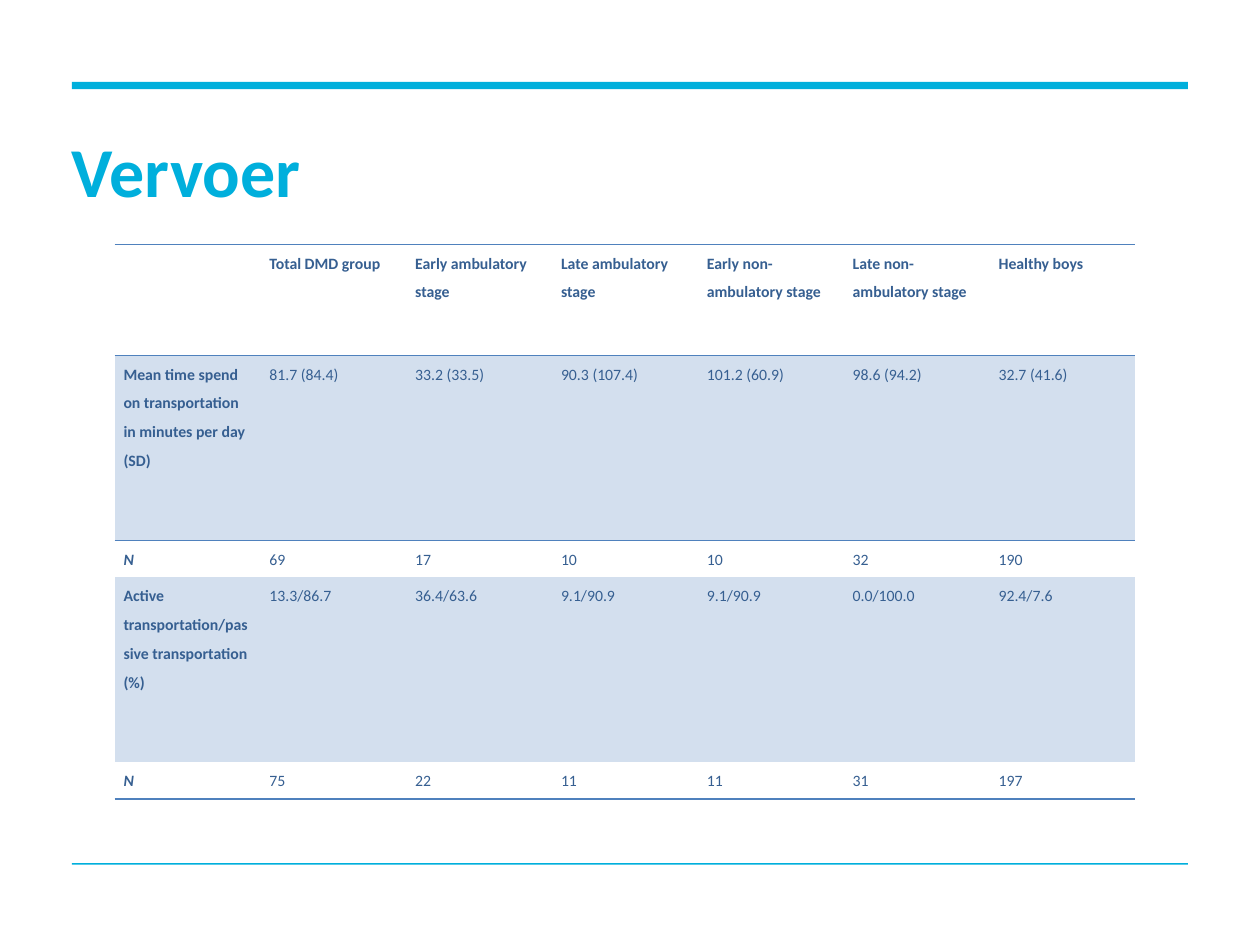
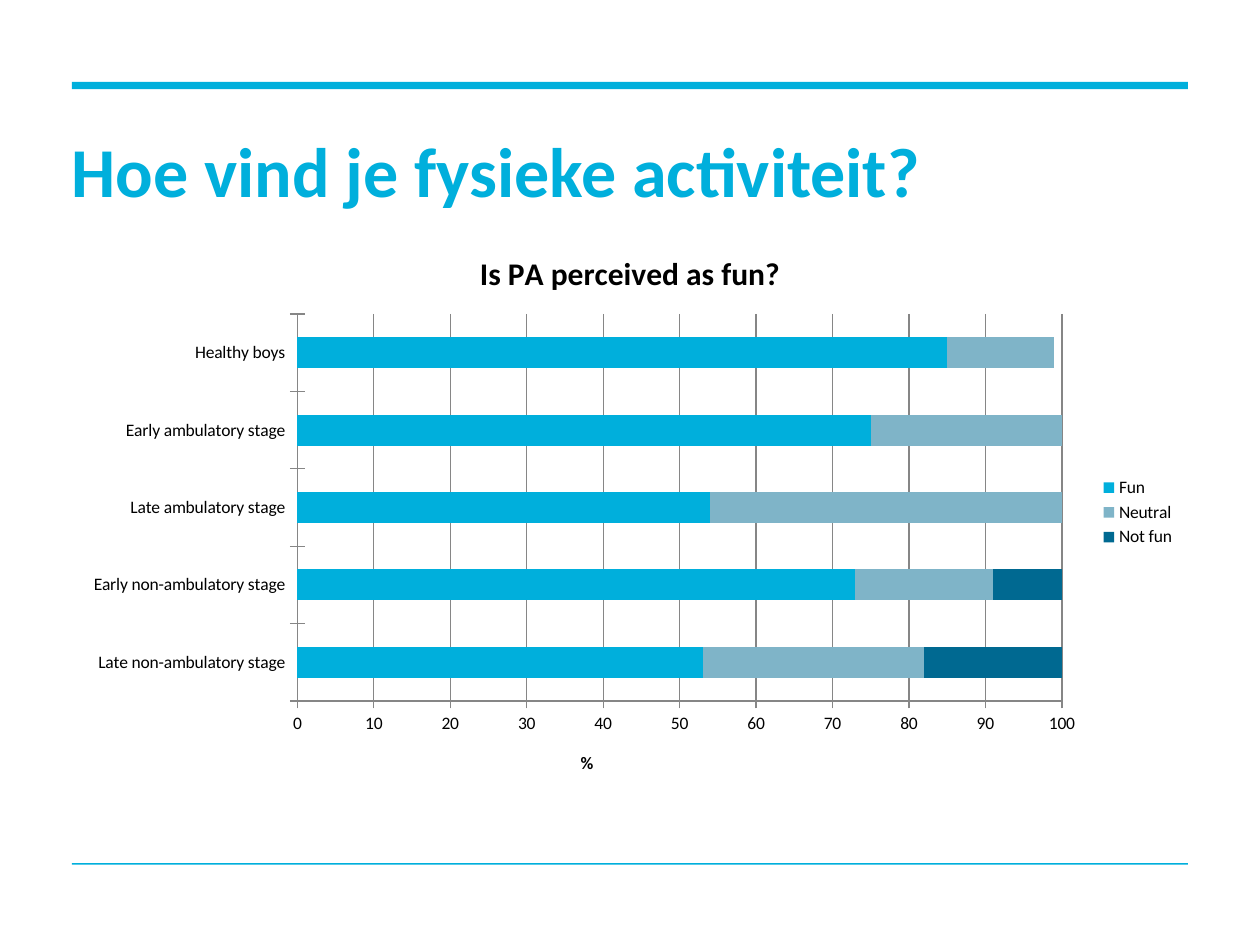
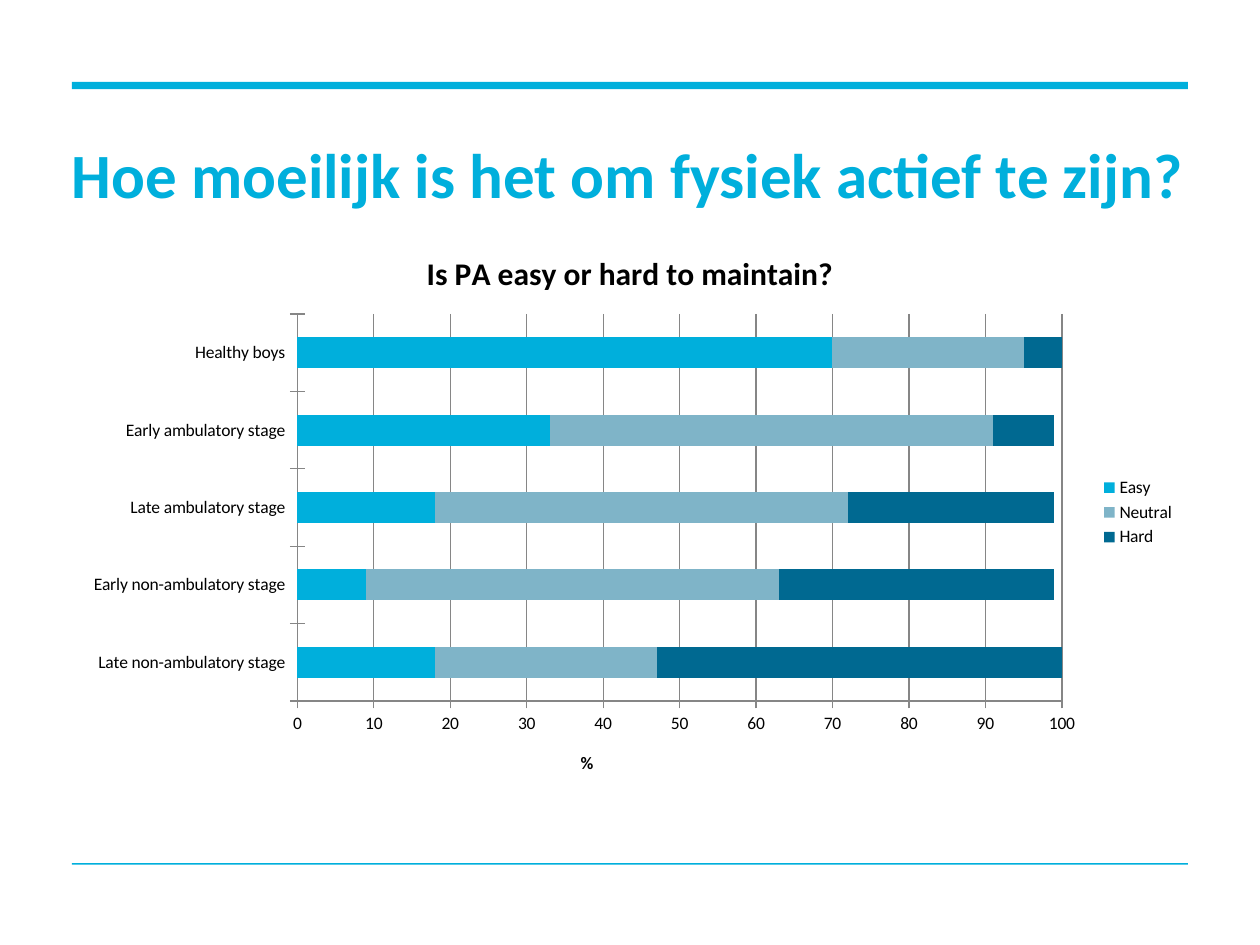
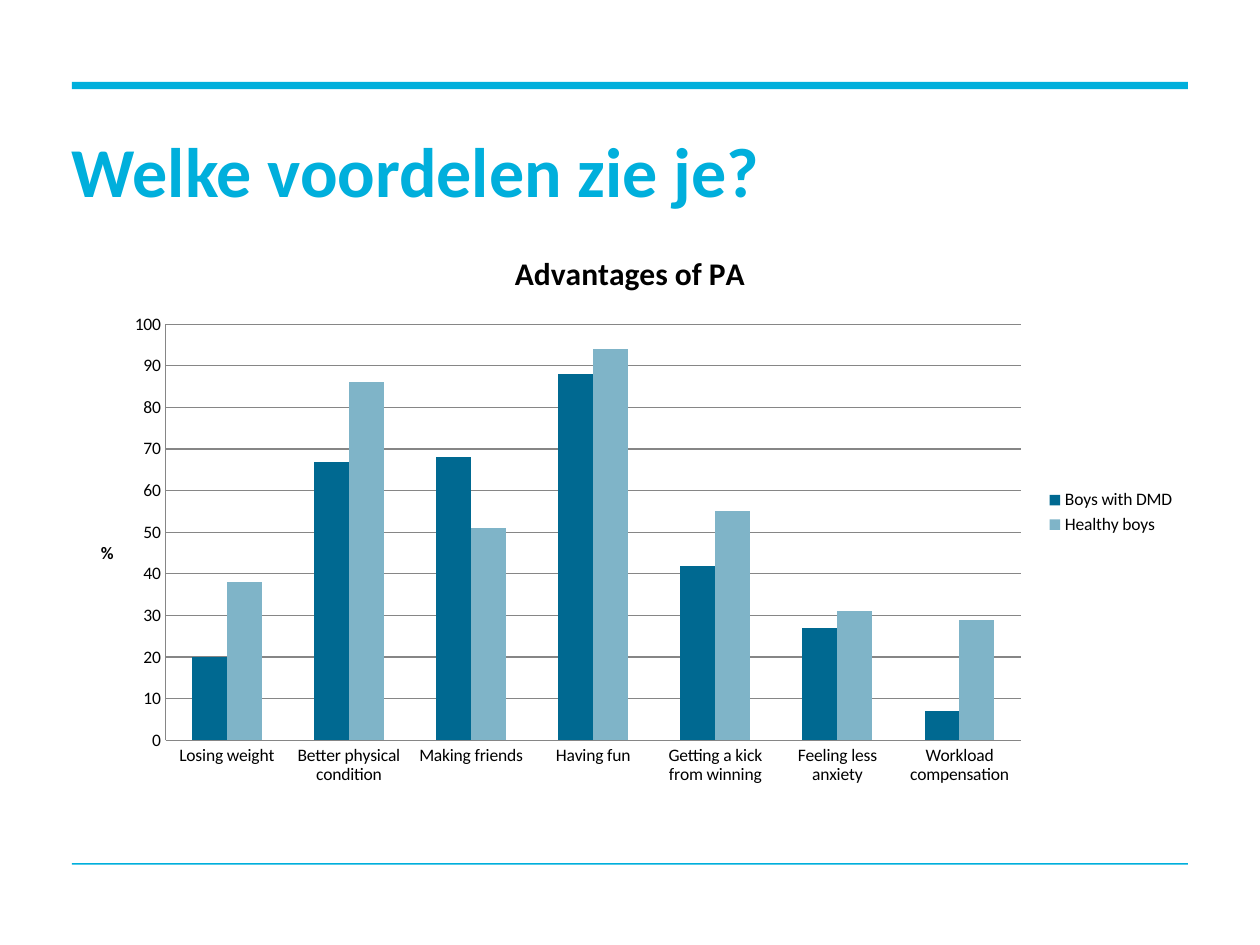
"""Build four slides on transport and physical activity in boys with DMD."""
from dataclasses import dataclass
from typing import Optional

from lxml import etree
from pptx import Presentation
from pptx import util as u
from pptx.chart.data import CategoryChartData
from pptx.dml.color import RGBColor
from pptx.enum import chart as charts, shapes, text as texts
from pptx.oxml import ns

COLORS = {
    "accent": "00AFDC",
    "soft": "7FB4C8",
    "deep": "006991",
    "text": "000000",
    "axis": "868686",
    "table_text": "365F91",
    "table_line": "4F81BD",
    "table_band": "D3DFEE",
}
FONT = "Calibri"
NO_STYLE = "{2D5ABB26-0587-4C30-8999-92F81FD0307C}"
LEFT, WIDTH = u.Cm(1.45), u.Cm(22.5)


@dataclass(frozen=True)
class Band:
    top: float
    height: float


@dataclass(frozen=True)
class Series:
    name: str
    values: tuple[int, ...]
    color: str


@dataclass(frozen=True)
class ChartStyle:
    kind: charts.XL_CHART_TYPE
    tick: charts.XL_TICK_MARK
    plot_area: dict[str, float]
    axis_title: dict[str, float]
    maximum: Optional[int] = None
    overlap: int = 0


@dataclass(frozen=True)
class ChartSlide:
    heading: str
    title: str
    categories: tuple[str, ...]
    series: tuple[Series, ...]
    style: ChartStyle
    heading_size: int = 40


BANDS = (Band(1.65, 0.15), Band(17.4, 0.03))

STACKED = ChartStyle(
    charts.XL_CHART_TYPE.BAR_STACKED, charts.XL_TICK_MARK.CROSS,
    {"x": 0.202, "y": 0.151, "w": 0.685, "h": 0.681},
    {"x": 0.453, "y": 0.916}, maximum=100, overlap=100)
COLUMNS = ChartStyle(
    charts.XL_CHART_TYPE.COLUMN_CLUSTERED, charts.XL_TICK_MARK.NONE,
    {"x": 0.084, "y": 0.169, "w": 0.766, "h": 0.732},
    {"x": 0.023, "y": 0.546})

STAGES = ("Late non-ambulatory stage", "Early non-ambulatory stage",
          "Late ambulatory stage", "Early ambulatory stage", "Healthy boys")
ADVANTAGES = ("Losing weight", "Better physical condition", "Making friends",
              "Having fun", "Getting a kick from winning",
              "Feeling less anxiety", "Workload compensation")

CHART_SLIDES = (
    ChartSlide("Hoe vind je fysieke activiteit?", "Is PA perceived as fun?", STAGES, (
        Series("Fun", (53, 73, 54, 75, 85), "accent"),
        Series("Neutral", (29, 18, 46, 25, 14), "soft"),
        Series("Not fun", (18, 9, 0, 0, 0), "deep")), STACKED),
    ChartSlide("Hoe moeilijk is het om fysiek actief te zijn?",
               "Is PA easy or hard to maintain?", STAGES, (
        Series("Easy", (18, 9, 18, 33, 70), "accent"),
        Series("Neutral", (29, 54, 54, 58, 25), "soft"),
        Series("Hard", (53, 36, 27, 8, 6), "deep")), STACKED, heading_size=36),
    ChartSlide("Welke voordelen zie je?", "Advantages of PA", ADVANTAGES, (
        Series("Boys with DMD", (20, 67, 68, 88, 42, 27, 7), "deep"),
        Series("Healthy boys", (38, 86, 51, 94, 55, 31, 29), "soft")), COLUMNS),
)

TRANSPORT_ROWS = (
    ("", "Total DMD group", "Early ambulatory stage", "Late ambulatory stage",
     "Early non-ambulatory stage", "Late non-ambulatory stage", "Healthy boys"),
    ("Mean time spend on transportation in minutes per day (SD)", "81.7 (84.4)",
     "33.2 (33.5)", "90.3 (107.4)", "101.2 (60.9)", "98.6 (94.2)", "32.7 (41.6)"),
    ("N", "69", "17", "10", "10", "32", "190"),
    ("Active transportation/passive transportation (%)", "13.3/86.7", "36.4/63.6",
     "9.1/90.9", "9.1/90.9", "0.0/100.0", "92.4/7.6"),
    ("N", "75", "22", "11", "11", "31", "197"),
)
ROW_HEIGHTS = (2.24, 3.73, 0.74, 3.73, 0.74)
COLUMN_WIDTH = 2.94


def rgb(name: str) -> RGBColor:
    return RGBColor.from_string(COLORS[name])


def write_text(frame, content: str, *, size: float, color: str = "text",
               bold: bool = False, italic: bool = False, spacing=None) -> None:
    paragraph = frame.paragraphs[0]
    paragraph.line_spacing = spacing
    run = paragraph.add_run()
    run.text = content
    font = run.font
    font.name, font.size, font.bold, font.italic = FONT, u.Pt(size), bold, italic
    font.color.rgb = rgb(color)


def add_base_slide(presentation, heading: str, size: int = 40):
    slide = presentation.slides.add_slide(presentation.slide_layouts[6])
    for band in BANDS:
        shape = slide.shapes.add_shape(shapes.MSO_SHAPE.RECTANGLE, LEFT,
                                       u.Cm(band.top), WIDTH, u.Cm(band.height))
        shape.shadow.inherit = False
        shape.fill.solid()
        shape.fill.fore_color.rgb = rgb("accent")
        shape.line.fill.background()
    frame = slide.shapes.add_textbox(LEFT, u.Cm(2.79), WIDTH, u.Cm(1.47)).text_frame
    frame.word_wrap = True
    frame.vertical_anchor = texts.MSO_ANCHOR.MIDDLE
    frame.margin_left = frame.margin_right = frame.margin_top = frame.margin_bottom = 0
    write_text(frame, heading, size=size, color="accent", bold=True, spacing=u.Pt(42))
    return slide


def add_cell_line(cell, side: str) -> None:
    properties = cell._tc.get_or_add_tcPr()
    line = etree.SubElement(properties, ns.qn(f"a:{side}"), w=str(u.Pt(1)))
    fill = etree.SubElement(line, ns.qn("a:solidFill"))
    etree.SubElement(fill, ns.qn("a:srgbClr"), val=COLORS["table_line"])


def add_transport_table(slide) -> None:
    row_count, column_count = len(TRANSPORT_ROWS), len(TRANSPORT_ROWS[0])
    table = slide.shapes.add_table(
        row_count, column_count, u.Cm(2.31), u.Cm(4.93),
        u.Cm(COLUMN_WIDTH * column_count), u.Cm(sum(ROW_HEIGHTS))).table
    table.first_row = table.horz_banding = False
    table._tbl.tblPr.find(ns.qn("a:tableStyleId")).text = NO_STYLE
    for column in table.columns:
        column.width = u.Cm(COLUMN_WIDTH)
    for row_index, row in enumerate(TRANSPORT_ROWS):
        table.rows[row_index].height = u.Cm(ROW_HEIGHTS[row_index])
        for column_index, content in enumerate(row):
            cell = table.cell(row_index, column_index)
            cell.margin_left = cell.margin_right = u.Cm(0.18)
            cell.margin_top = cell.margin_bottom = 0
            if row_index < 2:
                add_cell_line(cell, "lnT")
            if row_index in (0, row_count - 1):
                add_cell_line(cell, "lnB")
            if row_index % 2:
                cell.fill.solid()
                cell.fill.fore_color.rgb = rgb("table_band")
            else:
                cell.fill.background()
            if content:
                write_text(cell.text_frame, content, size=9, color="table_text",
                           bold=row_index == 0 or column_index == 0,
                           italic=content == "N", spacing=1.5)


def place(element, index: int, fractions: dict[str, float], inner: bool = False) -> None:
    for old in element.findall(ns.qn("c:layout")):
        element.remove(old)
    layout = etree.Element(ns.qn("c:layout"))
    element.insert(index, layout)
    manual = etree.SubElement(layout, ns.qn("c:manualLayout"))
    if inner:
        etree.SubElement(manual, ns.qn("c:layoutTarget"), val="inner")
    for mode in ("xMode", "yMode"):
        etree.SubElement(manual, ns.qn(f"c:{mode}"), val="edge")
    for key, value in fractions.items():
        etree.SubElement(manual, ns.qn(f"c:{key}"), val=str(value))


def add_activity_chart(slide, content: ChartSlide) -> None:
    style = content.style
    data = CategoryChartData()
    data.categories = content.categories
    for series in content.series:
        data.add_series(series.name, series.values)
    chart = slide.shapes.add_chart(style.kind, LEFT, u.Cm(4.6), WIDTH,
                                   u.Cm(11.46), data).chart
    chart.font.name, chart.font.size = FONT, u.Pt(10)
    chart.font.color.rgb = rgb("text")
    chart.has_title = True
    write_text(chart.chart_title.text_frame, content.title, size=18, bold=True)
    chart.has_legend = True
    chart.legend.position = charts.XL_LEGEND_POSITION.RIGHT
    chart.legend.include_in_layout = False

    plot = chart.plots[0]
    plot.vary_by_categories = False
    plot.gap_width, plot.overlap = 150, style.overlap
    for drawn, series in zip(plot.series, content.series):
        drawn.format.fill.solid()
        drawn.format.fill.fore_color.rgb = rgb(series.color)

    value_axis = chart.value_axis
    for axis in (chart.category_axis, value_axis):
        axis.major_tick_mark = style.tick
        axis.minor_tick_mark = charts.XL_TICK_MARK.NONE
        axis.format.line.color.rgb = rgb("axis")
    value_axis.maximum_scale = style.maximum
    value_axis.has_major_gridlines = True
    value_axis.major_gridlines.format.line.color.rgb = rgb("axis")
    write_text(value_axis.axis_title.text_frame, "%", size=10, bold=True)
    title = value_axis.axis_title._element
    body = title.find(f".//{ns.qn('a:bodyPr')}")
    body.set("rot", "0")
    body.set("vert", "horz")
    place(title, 1, style.axis_title)
    place(chart._chartSpace.chart.plotArea, 0, style.plot_area, inner=True)


def main() -> None:
    presentation = Presentation()
    presentation.slide_width, presentation.slide_height = u.Cm(25.4), u.Cm(19.05)
    add_transport_table(add_base_slide(presentation, "Vervoer"))
    for content in CHART_SLIDES:
        slide = add_base_slide(presentation, content.heading, content.heading_size)
        add_activity_chart(slide, content)
    presentation.save("out.pptx")


if __name__ == "__main__":
    main()
